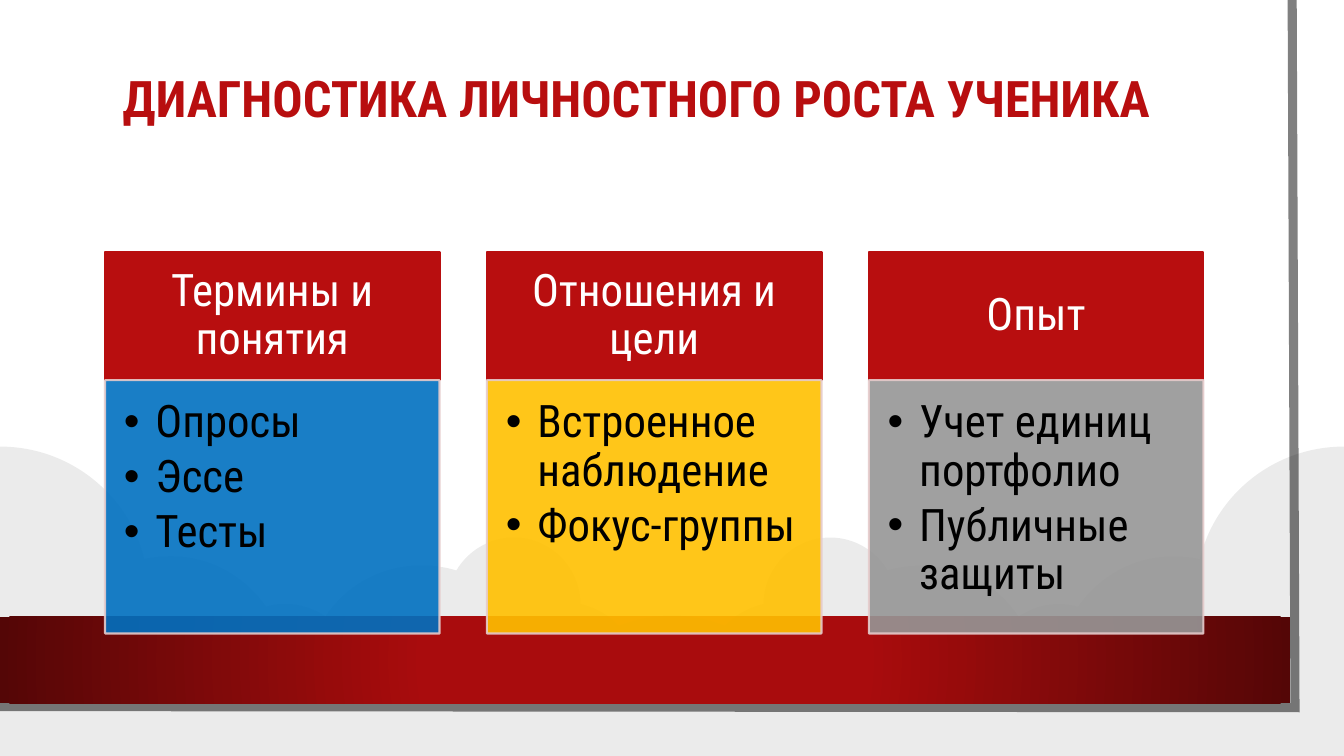
from dataclasses import dataclass

from lxml import etree
from pptx import Presentation
from pptx.dml.color import RGBColor
from pptx.enum.shapes import MSO_SHAPE
from pptx.enum.text import MSO_ANCHOR, MSO_AUTO_SIZE, PP_ALIGN
from pptx.oxml.ns import qn
from pptx.util import Pt

RECTANGLE = MSO_SHAPE.RECTANGLE
TOP, MIDDLE = MSO_ANCHOR.TOP, MSO_ANCHOR.MIDDLE
LEFT, CENTER = PP_ALIGN.LEFT, PP_ALIGN.CENTER
NO_AUTOFIT = MSO_AUTO_SIZE.NONE

FONT = "Roboto Condensed"
COLORS = {
    "red": "B80E0F", "dark_red": "5C0707", "white": "FFFFFF", "black": "000000",
    "frame": "808080", "border": "E6CCCC",
    "blue": "0070C0", "yellow": "FFC000", "gray": "969696",
}
PAGE_WIDTH, PAGE_HEIGHT = 960, 540
COLUMN_LEFT, COLUMN_STEP, COLUMN_WIDTH = 75, 272.8, 239
HEADER_TOP, HEADER_HEIGHT, LIST_HEIGHT = 180, 91.5, 181

CLOUD_START = (0, 319)
CLOUD_CURVES = [
    ((50, 319), (92, 353.5), (103, 399.5)),
    ((109, 398), (116, 397.5), (122.5, 397.5)),
    ((150.5, 397.5), (175, 412), (190, 433.5)),
    ((194.5, 432), (199, 431.5), (204, 431.5)),
    ((214.5, 431.5), (224.5, 435), (232.5, 440.5)),
    ((247, 418.5), (272, 404), (301, 404)),
    ((309.5, 404), (318, 405), (326, 407.5)),
    ((334, 394), (349, 384), (367, 384)),
    ((393, 384), (414.5, 405.5), (414.5, 431.5)),
    ((425.5, 434), (435.5, 440), (442, 447)),
    ((453, 443), (464.5, 440), (476, 440)),
]


@dataclass
class Column:
    heading: str
    items: list[str]
    color: str
    placeholder: int


COLUMNS = [
    Column("Термины и понятия", ["Опросы", "Эссе", "Тесты"], "blue", 2),
    Column("Отношения и цели", ["Встроенное наблюдение", "Фокус-группы"], "yellow", 4),
    Column("Опыт", ["Учет единиц портфолио", "Публичные защиты"], "gray", 1),
]


def rgb(name: str) -> RGBColor:
    return RGBColor.from_string(COLORS[name])


def paint(fill, color: str, opacity: int = 100) -> None:
    fill.solid()
    fill.fore_color.rgb = rgb(color)
    if opacity < 100:
        element = fill._xPr.find(qn("a:solidFill"))[0]
        etree.SubElement(element, qn("a:alpha")).set("val", str(opacity * 1000))


def place(box, left: float, top: float, width: float, height: float) -> None:
    box.left, box.top, box.width, box.height = Pt(left), Pt(top), Pt(width), Pt(height)


def add_rectangle(page, left: float, top: float, width: float, height: float, color: str):
    box = page.shapes.add_shape(RECTANGLE, Pt(left), Pt(top), Pt(width), Pt(height))
    box.shadow.inherit = False
    paint(box.fill, color)
    box.line.fill.background()
    return box


def add_outline(page, points: list[tuple[float, float]], close: bool):
    corners = [(Pt(x), Pt(y)) for x, y in points]
    builder = page.shapes.build_freeform(*corners[0])
    builder.add_line_segments(corners[1:], close=close)
    outline = builder.convert_to_shape()
    outline.shadow.inherit = False
    return outline


def bend(segments: list) -> None:
    for first in range(0, len(segments), 3):
        curve = etree.Element(qn("a:cubicBezTo"))
        segments[first].addprevious(curve)
        for segment in segments[first:first + 3]:
            curve.append(segment[0])
            segment.getparent().remove(segment)


def add_clouds(page) -> None:
    half = [CLOUD_START, *(point for curve in CLOUD_CURVES for point in curve)]
    mirrored = [(PAGE_WIDTH - x, y) for x, y in reversed(half)]
    clouds = add_outline(
        page, [(0, PAGE_HEIGHT), *half, *mirrored, (PAGE_WIDTH, PAGE_HEIGHT)], True)
    segments = list(clouds._element.iter(qn("a:lnTo")))
    size = len(half)
    bend(segments[1:size])
    bend(segments[size + 1:2 * size])
    paint(clouds.fill, "black", 8)
    clouds.line.fill.background()


def add_backdrop(page) -> None:
    add_rectangle(page, 0, 0, 943, 523.5, "white")

    frame = add_outline(page, [(923, 0), (925, 505.5), (-2, 504.7)], False)
    frame.fill.background()
    paint(frame.line.fill, "frame")
    frame.line.width = Pt(6.5)
    line = frame._element.spPr.find(qn("a:ln"))
    etree.SubElement(line, qn("a:miter")).set("lim", "800000")

    band = add_rectangle(page, 0, 440.7, 921.5, 61.5, "red")
    band.fill.gradient()
    for stop, color, position in zip(band.fill.gradient_stops, ("red", "dark_red"), (0.34, 1)):
        stop.color.rgb = rgb(color)
        stop.position = position
    gradient = band._element.spPr.find(qn("a:gradFill"))
    gradient.remove(gradient.find(qn("a:lin")))
    circle = etree.SubElement(gradient, qn("a:path"))
    circle.set("path", "circle")
    center = etree.SubElement(circle, qn("a:fillToRect"))
    for side in "ltrb":
        center.set(side, "50000")

    add_clouds(page)


def set_text(box, text: str, size: float, color: str, align, anchor, spacing: float,
             insets: tuple[float, float, float, float], bold: bool = False,
             bullets: bool = False) -> None:
    frame = box.text_frame
    frame.text = text
    frame.word_wrap = True
    frame.auto_size = NO_AUTOFIT
    frame.vertical_anchor = anchor
    (frame.margin_left, frame.margin_top,
     frame.margin_right, frame.margin_bottom) = map(Pt, insets)
    for para in frame.paragraphs:
        if bullets:
            properties = para._p.get_or_add_pPr()
            properties.set("marL", str(Pt(22.5)))
            properties.set("indent", str(Pt(-22.5)))
            etree.SubElement(properties, qn("a:buFont")).set("typeface", "Arial")
            etree.SubElement(properties, qn("a:buChar")).set("char", "•")
            para.space_after = Pt(4.8)
        para.alignment = align
        para.line_spacing = spacing
        para.space_before = Pt(0)
        for span in para.runs:
            span.font.name = FONT
            span.font.size = Pt(size)
            span.font.bold = bold
            span.font.color.rgb = rgb(color)


def add_column(page, column: Column, left: float) -> None:
    header = add_rectangle(page, left, HEADER_TOP, COLUMN_WIDTH, HEADER_HEIGHT, "red")
    paint(header.line.fill, "red")
    header.line.width = Pt(1.5)
    set_text(header, column.heading, 32, "white", CENTER, MIDDLE, 0.9, (18, 10, 18, 10))

    body = next(box for box in page.placeholders
                if box.placeholder_format.idx == column.placeholder)
    page.shapes._spTree.append(body._element)
    place(body, left, HEADER_TOP + HEADER_HEIGHT, COLUMN_WIDTH, LIST_HEIGHT)
    paint(body.fill, column.color, 90)
    paint(body.line.fill, "border", 90)
    body.line.width = Pt(1.5)
    set_text(body, "\n".join(column.items), 32, "black", LEFT, TOP, 0.9,
             (13.5, 13.5, 18, 20), bullets=True)


def main() -> None:
    deck = Presentation()
    deck.slide_width, deck.slide_height = Pt(PAGE_WIDTH), Pt(PAGE_HEIGHT)
    page = deck.slides.add_slide(deck.slide_layouts.get_by_name("Comparison"))
    add_backdrop(page)

    title = page.shapes.title
    page.shapes._spTree.append(title._element)
    place(title, 49, 31, 811.5, 68.5)
    set_text(title, "ДИАГНОСТИКА ЛИЧНОСТНОГО РОСТА УЧЕНИКА", 36, "red", CENTER, MIDDLE,
             1.2, (7.2, 3.6, 7.2, 3.6), bold=True)

    for number, column in enumerate(COLUMNS):
        add_column(page, column, COLUMN_LEFT + number * COLUMN_STEP)

    for box in list(page.placeholders):
        if not box.text_frame.text:
            page.shapes._spTree.remove(box._element)
    deck.save("out.pptx")


if __name__ == "__main__":
    main()
